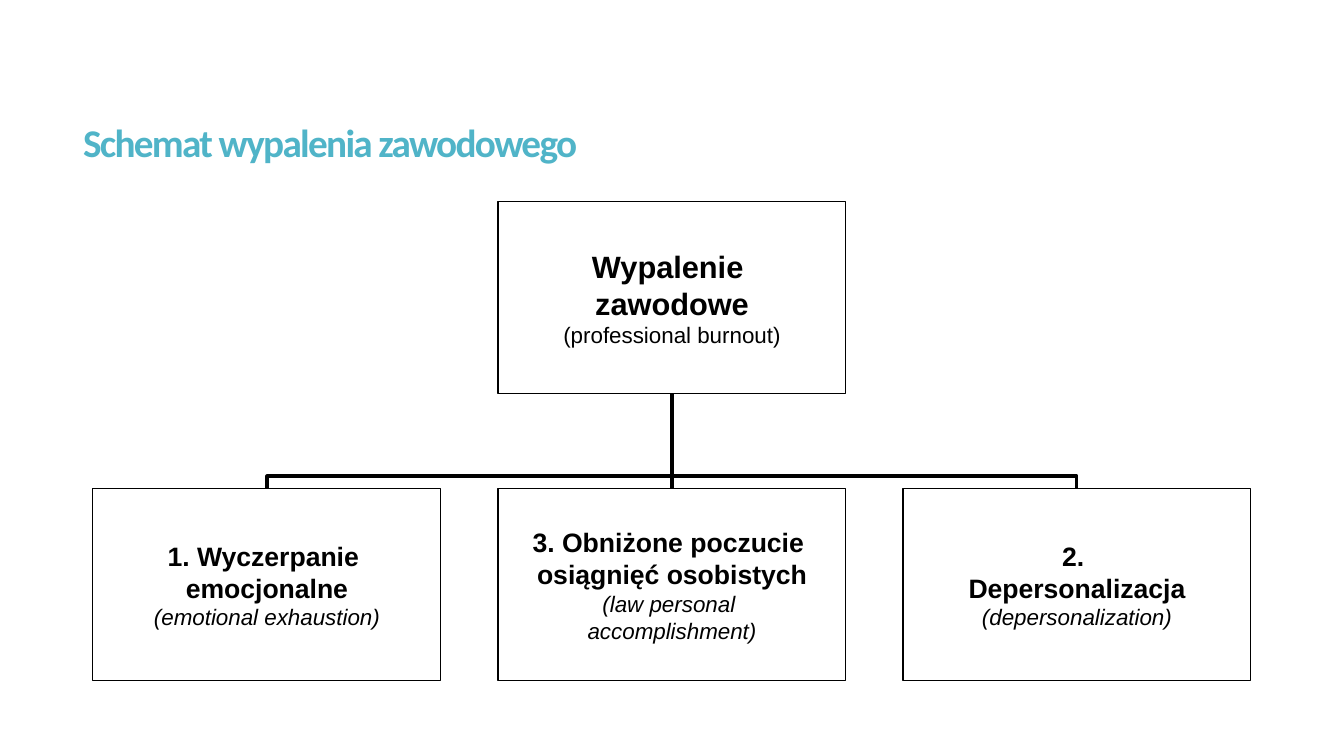
from lxml import etree
from pptx import Presentation
from pptx.dml.color import RGBColor
from pptx.enum.shapes import MSO_CONNECTOR, MSO_SHAPE
from pptx.enum.text import MSO_ANCHOR, MSO_AUTO_SIZE, PP_ALIGN
from pptx.oxml.ns import qn
from pptx.util import Pt

TITLE = "Schemat wypalenia zawodowego"
# Each box: bold lines, their size, lines in English, whether these are italic
ROOT = (["Wypalenie ", "zawodowe"], 22, ["(professional burnout)"], False)
CHILDREN = [
    (["1. Wyczerpanie ", "emocjonalne"], 19, ["(emotional exhaustion)"], True),
    (["3. Obniżone poczucie ", "osiągnięć osobistych"], 19,
     ["(law personal ", "accomplishment)"], True),
    (["2. ", "Depersonalizacja"], 19, ["(depersonalization)"], True),
]
COLORS = {"title": "50B4C8", "ink": "000000"}
ENGLISH_SIZE = 16

EMU_PER_PX = 914400 / 100.8
SLIDE_WIDTH, SLIDE_HEIGHT = 1344, 756
TITLE_AREA = (73, 55, 1187, 182)
BOX_WIDTH, BOX_HEIGHT = 348, 192
ROOT_TOP, CHILD_TOP = 202, 489
PITCH = 405
BEND = 0.137  # share of the way from child to root where the elbow turns
TOP_SITE, BOTTOM_SITE = 0, 2


def px(length):
    return round(length * EMU_PER_PX)


def color(name):
    return RGBColor.from_string(COLORS[name])


def add_line_of_text(paragraph, text, size, bold, italic):
    paragraph.alignment = PP_ALIGN.CENTER
    run = paragraph.add_run()
    run.text = text
    run.font.name = "Arial"
    run.font.size = Pt(size)
    run.font.bold = bold
    run.font.italic = italic
    run.font.color.rgb = color("ink")


def add_box(slide, center, top, content):
    names, size, english, italic = content
    box = slide.shapes.add_shape(
        MSO_SHAPE.RECTANGLE, px(center - BOX_WIDTH / 2), px(top), px(BOX_WIDTH), px(BOX_HEIGHT))
    box.shadow.inherit = False
    box.fill.background()
    box.line.color.rgb = color("ink")
    box.line.width = Pt(0.75)
    frame = box.text_frame
    frame.word_wrap = False
    frame.vertical_anchor = MSO_ANCHOR.MIDDLE
    frame.margin_left = frame.margin_right = frame.margin_top = frame.margin_bottom = 0
    lines = [(text, size, True, False) for text in names]
    lines += [(text, ENGLISH_SIZE, False, italic) for text in english]
    for index, line in enumerate(lines):
        paragraph = frame.add_paragraph() if index else frame.paragraphs[0]
        add_line_of_text(paragraph, *line)
    return box


def turn_elbow(connector, child_center, root_center):
    """Rotate an elbow so that it leaves the child box vertically."""
    rise = CHILD_TOP - ROOT_TOP - BOX_HEIGHT
    span = abs(child_center - root_center)
    connector.left = px((child_center + root_center - rise) / 2)
    connector.top = px(CHILD_TOP - rise / 2 - span / 2)
    connector.width, connector.height = px(rise), px(span)
    properties = connector.element.spPr
    transform = properties.find(qn("a:xfrm"))
    on_right = child_center > root_center
    transform.set("rot", str((90 if on_right else 270) * 60000))
    transform.set("flipH", str(int(on_right)))
    transform.set("flipV", "0")
    adjustments = properties.find(qn("a:prstGeom")).get_or_add_avLst()
    etree.SubElement(adjustments, qn("a:gd"), name="adj1", fmla=f"val {round(BEND * 100000)}")


def connect(slide, child, root, child_center, root_center):
    straight = child_center == root_center
    kind = MSO_CONNECTOR.STRAIGHT if straight else MSO_CONNECTOR.ELBOW
    connector = slide.shapes.add_connector(
        kind, px(child_center), px(CHILD_TOP), px(root_center), px(ROOT_TOP + BOX_HEIGHT))
    connector.begin_connect(child, TOP_SITE)
    connector.end_connect(root, BOTTOM_SITE)
    if not straight:
        turn_elbow(connector, child_center, root_center)
    connector.line.color.rgb = color("ink")
    connector.line.width = Pt(2.25)
    etree.SubElement(connector.element.spPr, qn("a:effectLst"))


def format_title(title):
    title.left, title.top, title.width, title.height = map(px, TITLE_AREA)
    frame = title.text_frame
    frame.auto_size = MSO_AUTO_SIZE.NONE
    frame.vertical_anchor = MSO_ANCHOR.MIDDLE
    paragraph = frame.paragraphs[0]
    paragraph.alignment = PP_ALIGN.LEFT
    paragraph.line_spacing = 0.85
    run = paragraph.add_run()
    run.text = TITLE
    run.font.name = "Calibri"
    run.font.size = Pt(28)
    run.font.bold = True
    run.font.color.rgb = color("title")
    run.font._element.set("spc", "-120")


def main():
    presentation = Presentation()
    presentation.slide_width, presentation.slide_height = px(SLIDE_WIDTH), px(SLIDE_HEIGHT)
    slide = presentation.slides.add_slide(presentation.slide_layouts[5])
    format_title(slide.shapes.title)

    root_center = SLIDE_WIDTH // 2
    root = add_box(slide, root_center, ROOT_TOP, ROOT)
    for index, content in enumerate(CHILDREN):
        child_center = root_center + (index - 1) * PITCH
        child = add_box(slide, child_center, CHILD_TOP, content)
        connect(slide, child, root, child_center, root_center)

    presentation.save("out.pptx")


if __name__ == "__main__":
    main()
